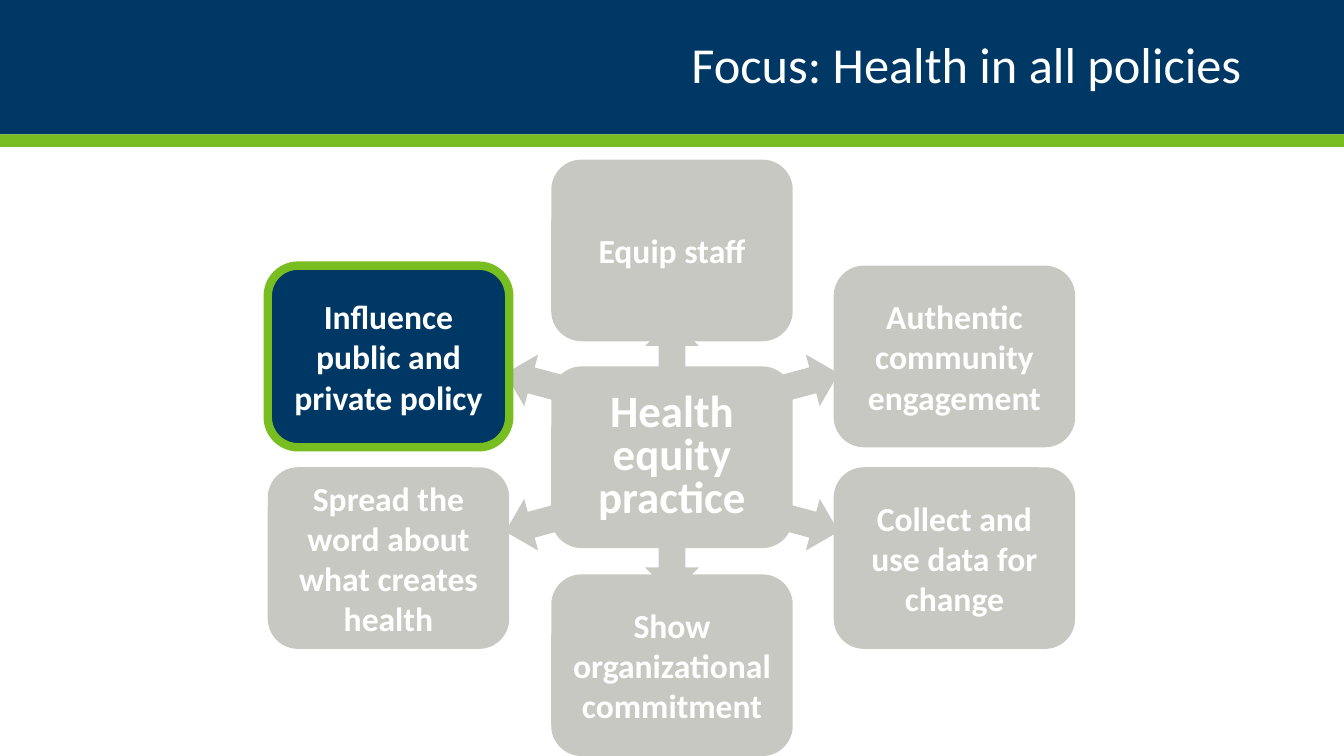
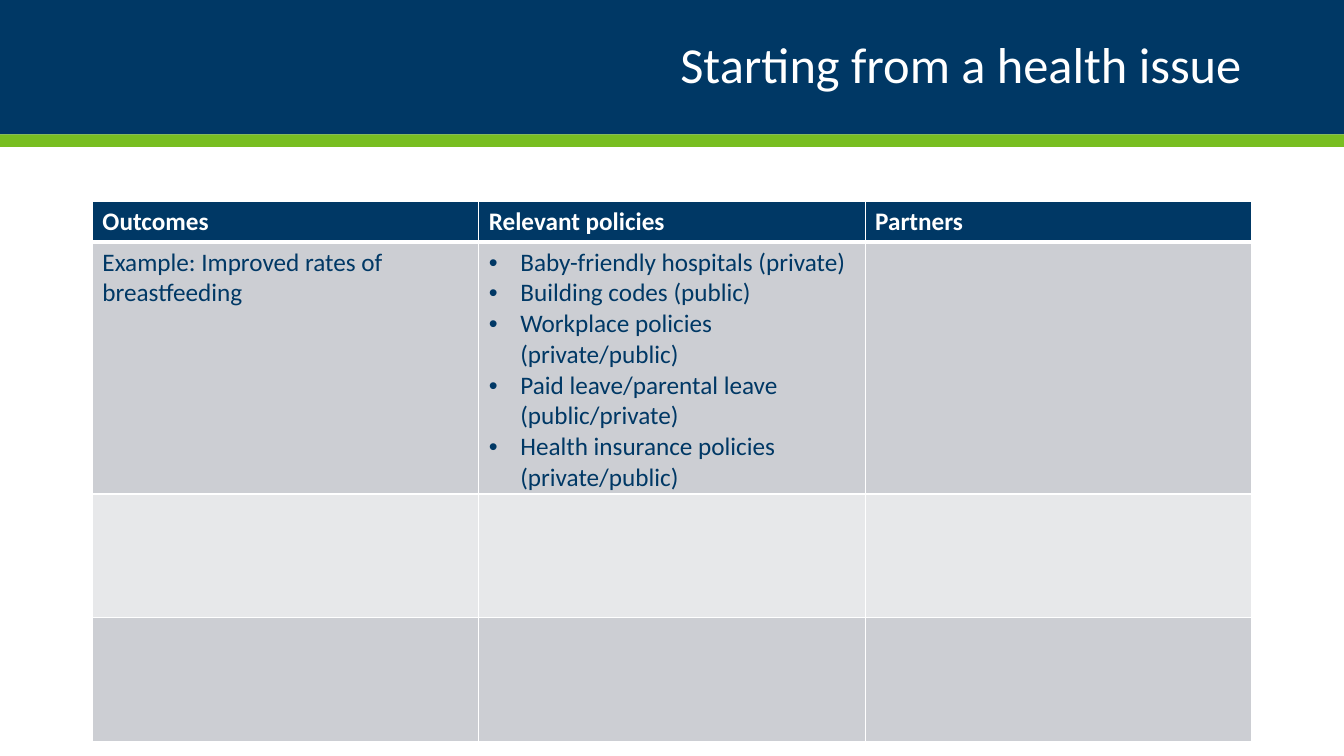
from pptx import Presentation
from pptx.dml.color import RGBColor
from pptx.enum.shapes import MSO_SHAPE as Shape
from pptx.enum.text import MSO_ANCHOR as Anchor, PP_ALIGN as Align
from pptx.oxml.ns import qn
from pptx.util import Pt
from lxml.etree import SubElement

SCALE = 9525
WIDTH, HEIGHT = 1280, 720
COLORS = {
    "navy": "003865",
    "green": "78BE21",
    "gray": "C8C8C3",
    "white": "FFFFFF",
    "row_dark": "CCCED3",
    "row_light": "E7E8EA",
}


def px(length):
    return int(length * SCALE)


def rgb(name):
    return RGBColor.from_string(COLORS[name])


class SlideMaker:
    font_name = "Calibri"

    def __init__(self):
        self.deck = Presentation()
        self.deck.slide_width = px(WIDTH)
        self.deck.slide_height = px(HEIGHT)
        self.slide = None

    def new_slide(self, title):
        self.slide = self.deck.slides.add_slide(self.deck.slide_layouts[6])
        self.shape(Shape.RECTANGLE, 0, 0, WIDTH, 128, "navy")
        self.shape(Shape.RECTANGLE, 0, 128, WIDTH, 12, "green")
        box = self.slide.shapes.add_textbox(px(88), px(16), px(1104), px(96))
        self.label(box.text_frame, title, 36, align=Align.RIGHT, spacing=0.9)

    def style(self, para, size, color="white", bold=False):
        para.font.name = self.font_name
        para.font.size = Pt(size)
        para.font.bold = bold
        para.font.color.rgb = rgb(color)

    def label(self, frame, text, size, bold=False, align=Align.CENTER, spacing=None):
        frame.word_wrap = True
        frame.vertical_anchor = Anchor.MIDDLE
        para = frame.paragraphs[0]
        para.text = text
        para.alignment = align
        para.line_spacing = spacing
        self.style(para, size, bold=bold)

    def shape(self, kind, left, top, width, height, fill):
        shape = self.slide.shapes.add_shape(kind, px(left), px(top), px(width), px(height))
        shape.shadow.inherit = False
        shape.fill.solid()
        shape.fill.fore_color.rgb = rgb(fill)
        shape.line.fill.background()
        return shape

    def card(self, text, left, top, size=24, spacing=None, fill="gray", outline=None):
        card = self.shape(Shape.ROUNDED_RECTANGLE, left, top, 230, 173, fill)
        if outline:
            card.line.color.rgb = rgb(outline)
            card.line.width = Pt(6)
        self.label(card.text_frame, text, size, bold=True, spacing=spacing)

    def arrow(self, kind, center_x, center_y, width, height, rotation):
        arrow = self.shape(kind, center_x - width / 2, center_y - height / 2,
                           width, height, "gray")
        arrow.rotation = rotation

    def bullet(self, para):
        properties = para._p.get_or_add_pPr()
        properties.set("marL", str(px(30)))
        properties.set("indent", str(px(-30)))
        SubElement(properties, qn("a:buFont"), typeface="Arial")
        SubElement(properties, qn("a:buChar"), char="•")
        defaults = properties.find(qn("a:defRPr"))
        if defaults is not None:
            properties.append(defaults)

    def borders(self, cell, widths):
        properties = cell._tc.get_or_add_tcPr()
        for side, width in zip("LRTB", widths):
            line = SubElement(properties, qn(f"a:ln{side}"), w=str(Pt(width)))
            fill = SubElement(line, qn("a:solidFill"))
            SubElement(fill, qn("a:srgbClr"), val=COLORS["white"])

    def cell(self, cell, lines, row):
        header = row == 0
        self.borders(cell, (1, 1, 3 if row == 1 else 1, 3 if header else 1))
        cell.fill.solid()
        fill = "navy" if header else "row_dark" if row % 2 else "row_light"
        cell.fill.fore_color.rgb = rgb(fill)
        frame = cell.text_frame
        frame.text = "\n".join(lines)
        for para in frame.paragraphs:
            self.style(para, 18, "white" if header else "navy", header)
            if len(lines) > 1:
                self.bullet(para)

    def table(self, left, top, column_width, heights, rows):
        columns = len(rows[0])
        table = self.slide.shapes.add_table(
            len(rows), columns, px(left), px(top),
            px(column_width * columns), px(sum(heights))).table
        for column in table.columns:
            column.width = px(column_width)
        for index, (height, row) in enumerate(zip(heights, rows)):
            table.rows[index].height = px(height)
            for column, lines in enumerate(row):
                self.cell(table.cell(index, column), lines, index)


def build_practice_slide(maker):
    maker.new_slide("Focus: Health in all policies")
    left, middle, right = 255, 525, 794
    upper, lower = 253, 445
    for text, x, y in (
        ("Spread the word about what creates health", left, lower),
        ("Equip staff", middle, 152),
        ("Show organizational commitment", middle, 547),
        ("Authentic community engagement", right, upper),
        ("Collect and use data for change", right, lower),
    ):
        maker.card(text, x, y)

    hub_x, hub_y = 640, 431
    for side_x, side_y, rotation in (
        (1, 1, 15), (1, -1, 345), (-1, 1, 165), (-1, -1, 195),
    ):
        maker.arrow(Shape.RIGHT_ARROW, hub_x + side_x * 109, hub_y + side_y * 62,
                    103, 51, rotation)
    for center_y, rotation in ((536, 0), (334, 180)):
        maker.arrow(Shape.DOWN_ARROW, hub_x, center_y, 51, 60, rotation)

    maker.card("Health equity practice", middle, 349, size=32, spacing=0.8)
    maker.card("Influence public and private policy", left, upper,
               fill="navy", outline="green")


def build_issue_slide(maker):
    maker.new_slide("Starting from a health issue")
    policies = [
        "Baby-friendly hospitals (private)",
        "Building codes (public)",
        "Workplace policies (private/public)",
        "Paid leave/parental leave (public/private)",
        "Health insurance policies (private/public)",
    ]
    empty_row = [[], [], []]
    maker.table(88, 192, 368, (37, 230, 118, 118), [
        [["Outcomes"], ["Relevant policies"], ["Partners"]],
        [["Example: Improved rates of breastfeeding"], policies, []],
        empty_row,
        empty_row,
    ])


def main():
    maker = SlideMaker()
    build_practice_slide(maker)
    build_issue_slide(maker)
    maker.deck.save("out.pptx")


if __name__ == "__main__":
    main()
